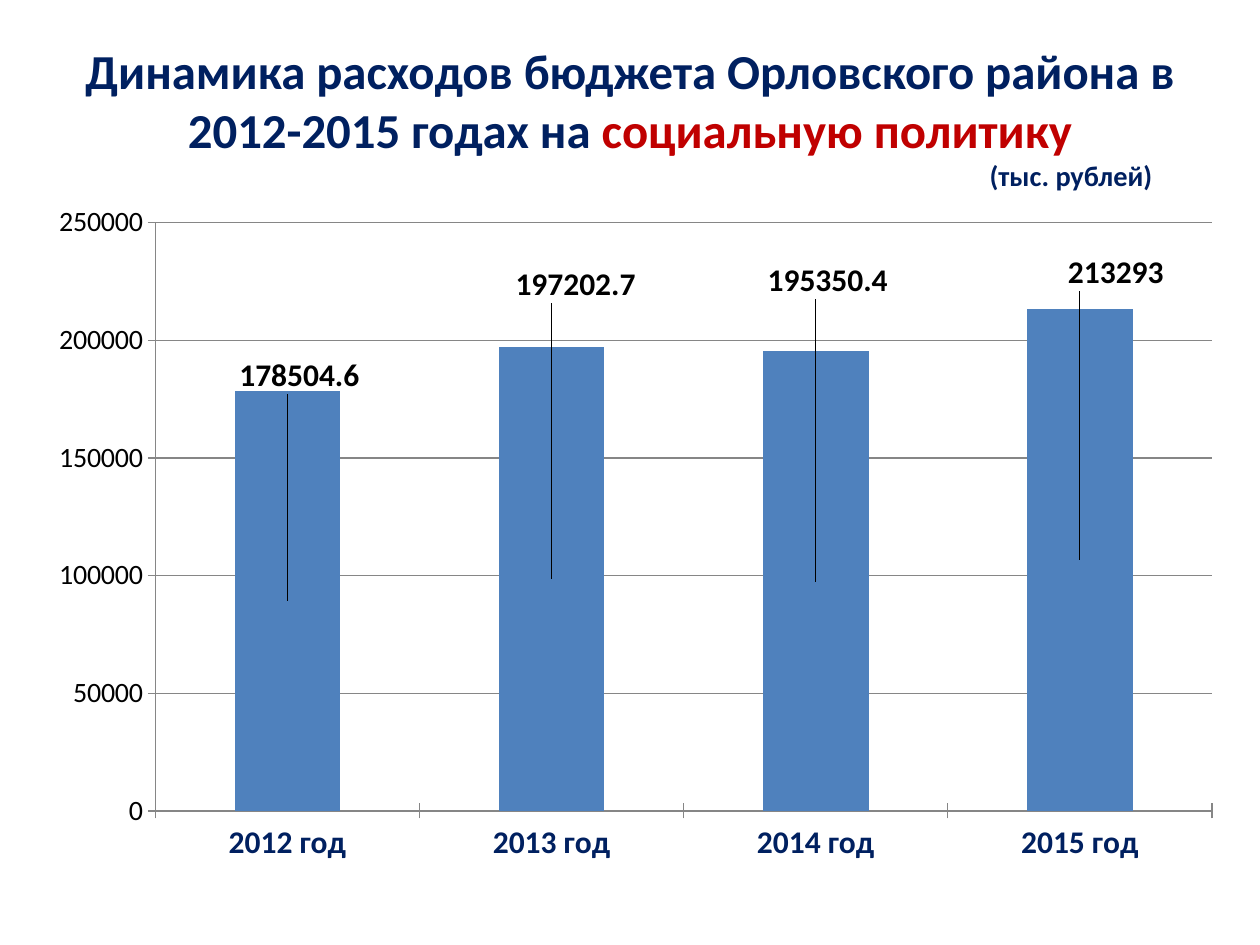
import pptx
import pptx.chart.data
import pptx.dml.color
import pptx.enum.chart
import pptx.enum.text
import pptx.oxml
import pptx.oxml.ns
import pptx.util
from pptx.util import Inches

FONT = "Calibri"
NAVY, RED, BLUE, GRAY, BLACK = "002060", "C00000", "4F81BD", "868686", "000000"
# value and label shift from the bar's middle, as shares of the chart size
SPENDING = {
    "2012 год": (178504.6, 0.01, -0.33),
    "2013 год": (197202.7, 0.02, -0.43),
    "2014 год": (195350.4, 0.01, -0.44),
    "2015 год": (213293, 0.03, -0.42),
}


def rgb(value):
    return pptx.dml.color.RGBColor.from_string(value)


def format_font(font, size, color=BLACK, bold=False):
    font.name = FONT
    font.size = pptx.util.Pt(size)
    font.bold = bold
    font.color.rgb = rgb(color)


def add_text(p, text, **fmt):
    r = p.add_run()
    r.text = text
    format_font(r.font, **fmt)


def manual_layout(**values):
    """Return a c:layout element with the given manualLayout settings."""
    items = "".join(f'<c:{key} val="{val}"/>' for key, val in values.items())
    ns = pptx.oxml.ns.nsdecls("c")
    return pptx.oxml.parse_xml(
        f"<c:layout {ns}><c:manualLayout>{items}</c:manualLayout></c:layout>")


def add_title(s):
    title = s.shapes.title
    title.left, title.top = Inches(0.5), Inches(0.3)
    title.width, title.height = Inches(9), Inches(1.25)
    tf = title.text_frame
    tf.word_wrap = True
    tf.auto_size = pptx.enum.text.MSO_AUTO_SIZE.NONE
    tf.vertical_anchor = pptx.enum.text.MSO_ANCHOR.MIDDLE
    heading, unit = tf.paragraphs[0], tf.add_paragraph()
    for p in (heading, unit):
        p.alignment = pptx.enum.text.PP_ALIGN.CENTER
        p.space_before = pptx.util.Pt(0)
    add_text(heading, "Динамика расходов бюджета Орловского района в 2012-2015 годах на ",
             size=27.9, color=NAVY, bold=True)
    add_text(heading, "социальную политику", size=27.9, color=RED, bold=True)
    # The unit is centred in the right-hand part of the title
    pPr = unit._p.get_or_add_pPr()
    pPr.set("marL", str(Inches(7)))
    pPr.set("indent", "0")
    add_text(unit, "(тыс. рублей)", size=16.2, color=NAVY, bold=True)


def format_axis(axis, **fmt):
    axis.major_tick_mark = pptx.enum.chart.XL_TICK_MARK.CROSS
    axis.minor_tick_mark = pptx.enum.chart.XL_TICK_MARK.NONE
    axis.format.line.color.rgb = rgb(GRAY)
    format_font(axis.tick_labels.font, **fmt)


def add_labels(series):
    labels = series.data_labels
    labels.show_value = True
    format_font(labels.font, size=18, bold=True)
    for i, (_, dx, dy) in enumerate(SPENDING.values()):
        label = series.points[i].data_label
        format_font(label.font, size=18, bold=True)
        idx = label._dLbl.find(pptx.oxml.ns.qn("c:idx"))
        idx.addnext(manual_layout(x=dx, y=dy))


def add_spending_chart(s):
    data = pptx.chart.data.CategoryChartData()
    data.categories = list(SPENDING)
    data.add_series("Series 1", [row[0] for row in SPENDING.values()])
    chart = s.shapes.add_chart(
        pptx.enum.chart.XL_CHART_TYPE.COLUMN_STACKED,
        Inches(0.28), Inches(1.55), Inches(9.53), Inches(5.43), data).chart
    chart.has_legend = False
    chart.has_title = False
    format_font(chart.font, size=10)

    format_axis(chart.category_axis, size=18, color=NAVY, bold=True)
    values = chart.value_axis
    format_axis(values, size=16)
    values.minimum_scale, values.maximum_scale, values.major_unit = 0, 250000, 50000
    values.has_major_gridlines = True
    values.major_gridlines.format.line.color.rgb = rgb(GRAY)

    plot = chart.plots[0]
    plot.gap_width, plot.overlap = 150, 100
    plot.vary_by_categories = False
    series = plot.series[0]
    series.format.fill.solid()
    series.format.fill.fore_color.rgb = rgb(BLUE)
    add_labels(series)

    area = chart._chartSpace.chart.plotArea
    for old in area.findall(pptx.oxml.ns.qn("c:layout")):
        area.remove(old)
    area.insert(0, manual_layout(layoutTarget="inner", xMode="edge", yMode="edge",
                                 x=0.1, y=0.04, w=0.88, h=0.86))


def main():
    prs = pptx.Presentation()
    prs.slide_width, prs.slide_height = Inches(10), Inches(7.5)
    s = prs.slides.add_slide(prs.slide_layouts[5])
    add_title(s)
    add_spending_chart(s)
    prs.save("out.pptx")


if __name__ == "__main__":
    main()
